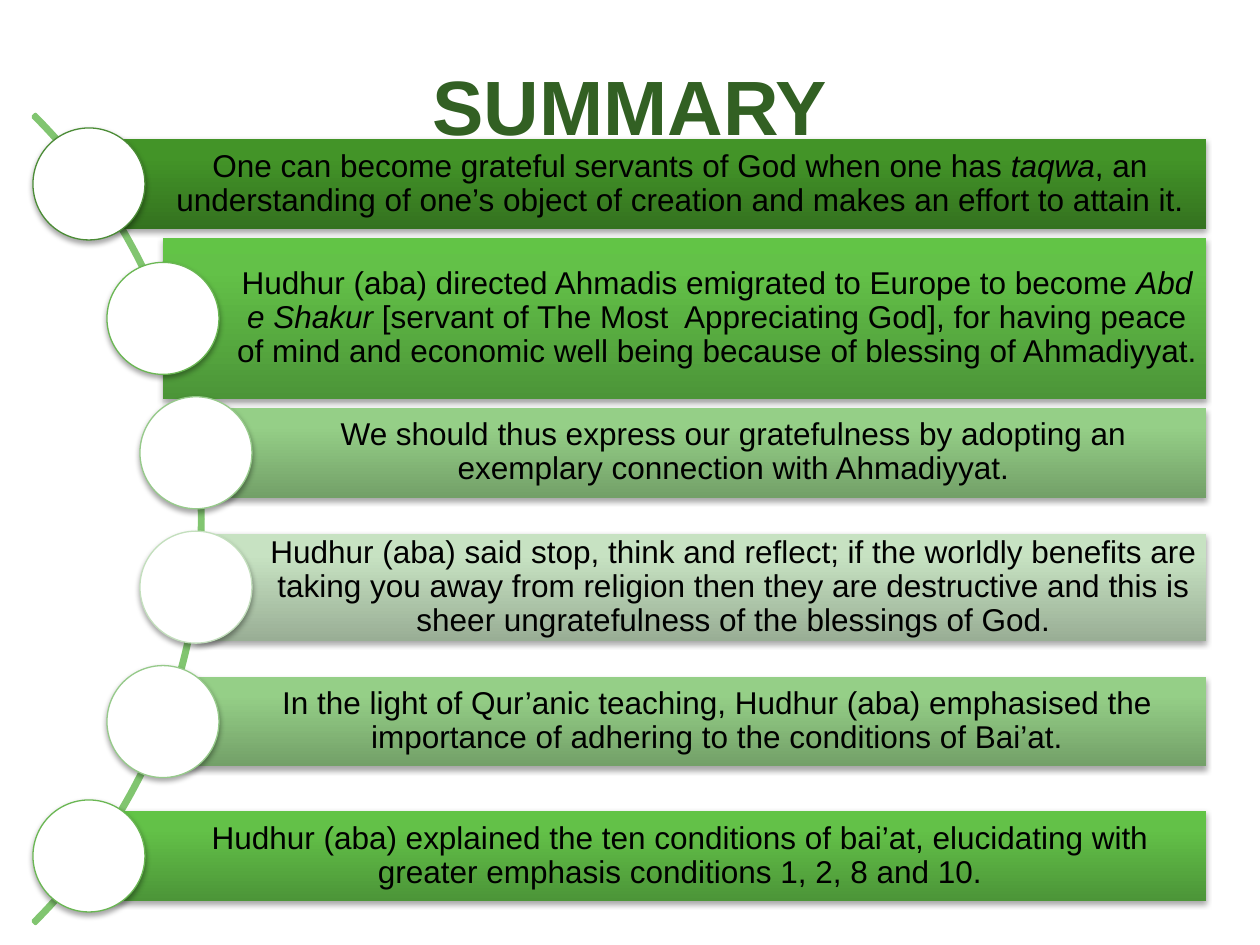
from dataclasses import dataclass

from lxml import etree
from pptx import Presentation
from pptx import util as u
from pptx.dml.color import RGBColor
from pptx.enum import shapes, text
from pptx.oxml import parse_xml
from pptx.oxml.ns import nsdecls, qn

PX_PER_INCH = 126


@dataclass(frozen=True)
class Theme:
    font: str = "Arial"
    title_size: int = 44
    body_size: int = 18
    title: str = "326023"
    ink: str = "000000"
    paper: str = "FFFFFF"
    arc: str = "81C570"


THEME = Theme()

# Gradient from bottom to top, then the outline of the circle
SHADES = {
    "forest": (("34721F", "439428", "429726"), "4B8C36"),
    "grass": (("4C9538", "63C148", "62C446"), "6AB753"),
    "sage": (("73A068", "95CF87", "95D286"), "96CA8A"),
    "mist": (("99AE95", "C7E2C2", "C8E3C2"), "C3DFBD"),
}
GRADIENT_STOPS = (0, 80, 100)

# Circle centre x, bar height, shade, text pieces (every second one is italic)
POINTS = [
    (89, 90, "forest", [
        "One can become grateful servants of God when one has ", "taqwa",
        ", an understanding of one’s object of creation and makes an effort to attain it."]),
    (163, 161, "grass", [
        "Hudhur (aba) directed Ahmadis emigrated to Europe to become ", "Abd e Shakur",
        " [servant of The Most  Appreciating God], for having peace of mind and "
        "economic well being because of blessing of Ahmadiyyat."]),
    (196, 90, "sage", [
        "We should thus express our gratefulness by adopting an exemplary "
        "connection with Ahmadiyyat."]),
    (196, 107, "mist", [
        "Hudhur (aba) said stop, think and reflect; if the worldly benefits are "
        "taking you away from religion then they are destructive and this is sheer "
        "ungratefulness of the blessings of God."]),
    (163, 90, "sage", [
        "In the light of Qur’anic teaching, Hudhur (aba) emphasised the importance "
        "of adhering to the conditions of Bai’at."]),
    (89, 90, "grass", [
        "Hudhur (aba) explained the ten conditions of bai’at, elucidating with "
        "greater emphasis conditions 1, 2, 8 and 10."]),
]


def px(length):
    return u.Inches(length / PX_PER_INCH)


def apply(target, values):
    for name, value in values.items():
        setattr(target, name, value)


def add_span(para, words, size, color, **style):
    span = para.add_run()
    span.text = words
    apply(span.font, {"name": THEME.font, "size": u.Pt(size), **style})
    span.font.color.rgb = RGBColor.from_string(color)


def add_figure(page, kind, box, line, weight):
    figure = page.shapes.add_shape(kind, *map(px, box))
    figure.shadow.inherit = False
    figure.line.color.rgb = RGBColor.from_string(line)
    figure.line.width = u.Pt(weight)
    return figure


def add_shadow(figure):
    effects = figure._element.spPr.find(qn("a:effectLst"))
    effects.append(parse_xml(
        f'<a:outerShdw {nsdecls("a")} blurRad="40000" dist="23000" dir="5400000" '
        f'rotWithShape="0"><a:srgbClr val="{THEME.ink}"><a:alpha val="35000"/>'
        '</a:srgbClr></a:outerShdw>'))


def fill_gradient(figure, colors):
    """Fill from bottom to top with the three colours."""
    figure.fill.gradient()
    gradient = figure._element.spPr.find(qn("a:gradFill"))
    figure.fill.gradient_angle = 90
    stops = gradient.find(qn("a:gsLst"))
    for stop in list(stops):
        stops.remove(stop)
    for position, color in zip(GRADIENT_STOPS, colors):
        stop = etree.SubElement(stops, qn("a:gs"), pos=str(position * 1000))
        etree.SubElement(stop, qn("a:srgbClr"), val=color)


def add_title(page, box, words):
    title = page.shapes.title
    apply(title, dict(zip(("left", "top", "width", "height"), map(px, box))))
    frame = title.text_frame
    apply(frame, {"margin_left": 0, "margin_right": 0, "margin_top": px(6),
                  "margin_bottom": 0, "vertical_anchor": text.MSO_ANCHOR.TOP})
    para = frame.paragraphs[0]
    para.alignment = text.PP_ALIGN.CENTER
    add_span(para, words, THEME.title_size, THEME.title, bold=True, underline=True)


def add_arc(page, box):
    """Draw the right-hand quarter of the circle that fills the box."""
    arc = add_figure(page, shapes.MSO_SHAPE.BLOCK_ARC, box, THEME.arc, 2)
    for index, value in enumerate((189, 27, 0.003)):
        arc.adjustments[index] = value
    arc.fill.background()


def add_bar(page, box, colors, pieces):
    bar = add_figure(page, shapes.MSO_SHAPE.RECTANGLE, box, THEME.paper, 1)
    bar.line.fill.background()
    fill_gradient(bar, colors)
    add_shadow(bar)
    frame = bar.text_frame
    apply(frame, {"word_wrap": True, "vertical_anchor": text.MSO_ANCHOR.MIDDLE,
                  "margin_left": px(71), "margin_right": px(6),
                  "margin_top": px(6), "margin_bottom": px(6)})
    para = frame.paragraphs[0]
    apply(para, {"alignment": text.PP_ALIGN.CENTER, "line_spacing": 0.9})
    for index, piece in enumerate(pieces):
        add_span(para, piece, THEME.body_size, THEME.ink, italic=index % 2 == 1)


def add_circle(page, box, outline):
    circle = add_figure(page, shapes.MSO_SHAPE.OVAL, box, outline, 0.75)
    circle.fill.solid()
    circle.fill.fore_color.rgb = RGBColor.from_string(THEME.paper)
    add_shadow(circle)


def add_points(page, box, diameter=112):
    """Stack the bars at equal pitch, each starting at the centre of its circle."""
    left, top, width, height = box
    radius = diameter // 2
    pitch = (height - diameter) / (len(POINTS) - 1)
    for index, (center_x, bar_height, shade, pieces) in enumerate(POINTS):
        colors, outline = SHADES[shade]
        center_y = top + radius + index * pitch
        add_bar(page, (center_x, center_y - bar_height / 2,
                       left + width - center_x, bar_height), colors, pieces)
        add_circle(page, (center_x - radius, center_y - radius,
                          diameter, diameter), outline)


def main():
    deck = Presentation()
    apply(deck, {"slide_width": px(1260), "slide_height": px(945)})
    page = deck.slides.add_slide(deck.slide_layouts[5])
    add_title(page, (63, 53, 1134, 126), "SUMMARY")
    add_arc(page, (-941, -53, 1144, 1144))
    add_points(page, (33, 128, 1173, 784))
    deck.save("out.pptx")


if __name__ == "__main__":
    main()
